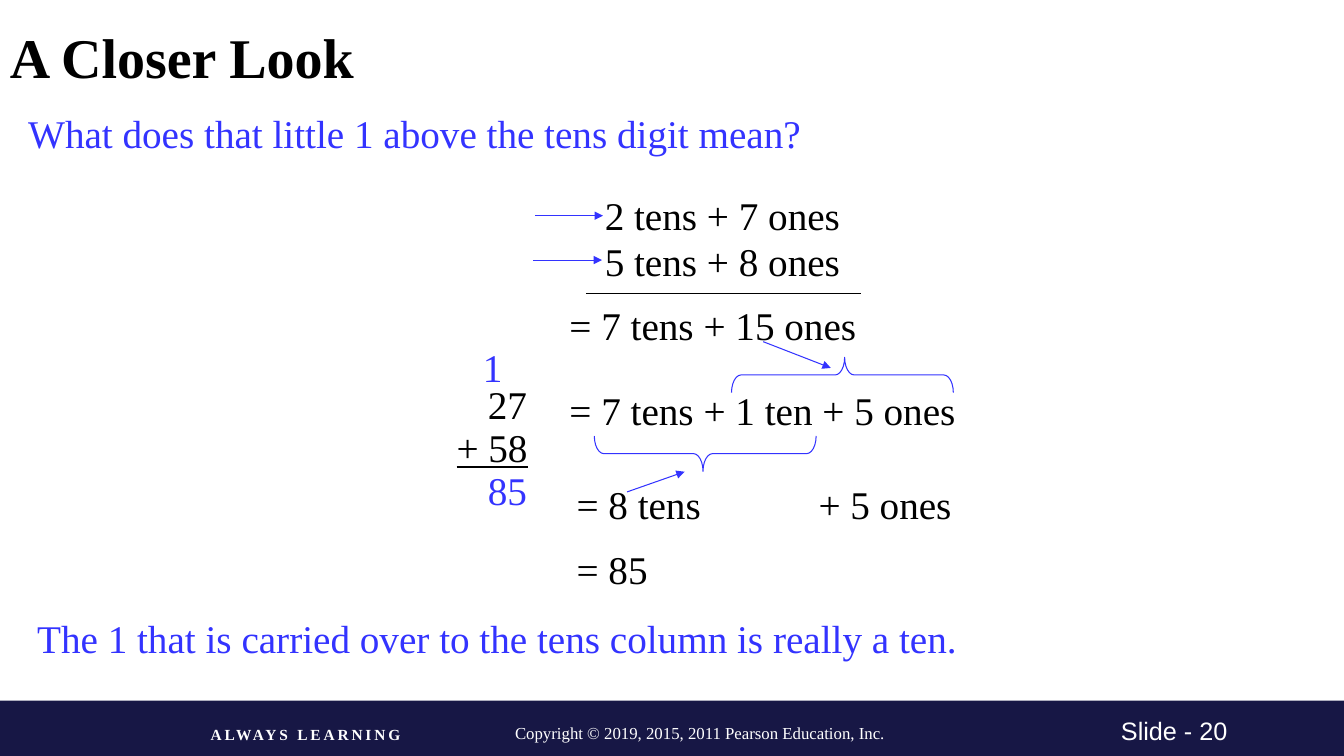
"""Builds the slide that explains the carried 1 in 27 + 58."""
import pptx
import pptx.dml.color
import pptx.enum.shapes
import pptx.enum.text
import pptx.oxml.ns
import pptx.util
from lxml import etree

Inches = pptx.util.Inches
Pt = pptx.util.Pt

THEME = {
    "ink": "000000", "accent": "3333FF", "band": "171745", "light": "FFFFFF",
    "serif": "Times New Roman", "sans": "Arial",
    "title": 40, "body": 28, "number": 18, "copyright": 12, "motto": 11,
    "line": 0.75,
}
BODY_HEIGHT = 0.57

TITLE = "A Closer Look"
STATEMENTS = [
    ("What does that little 1 above the tens digit mean?", 0.18, 1.04, 9.42),
    ("The 1 that is carried over to the tens column is really a ten.", 0.27, 6.05, 11.09),
]
SUM_COLUMN = [
    ("1", 4.69, 3.36, 0.4, "accent"),
    ("27", 4.74, 3.72, 0.66, "ink"),
    ("+ 58", 4.43, 4.15, 1.06, "ink"),
    ("85", 4.74, 4.58, 0.59, "accent"),
]
UNDERLINED = "+ 58"
EXPANSION = [
    ("2 tens + 7 ones", 5.9, 1.85, 2.56),
    ("5 tens + 8 ones", 5.9, 2.31, 2.56),
    ("= 7 tens + 15 ones", 5.55, 2.94, 3.07),
    ("= 7 tens + 1 ten + 5 ones", 5.55, 3.78, 4.07),
    ("= 8 tens\t+ 5 ones", 5.62, 4.72, 3.96),
    ("= 85", 5.62, 5.36, 0.91),
]
ONES_TAB = 2.4
SUM_RULE = (5.81, 2.91, 8.54, 2.91)
ARROWS = [
    (7.57, 3.39, 8.24, 3.65),
    (6.22, 4.88, 6.79, 4.68),
    (5.31, 2.14, 5.98, 2.14),
    (5.29, 2.58, 5.97, 2.58),
]
BRACES = [(8.18, 2.62, 90), (6.82, 3.4, 270)]
BRACE_SIZE = (0.35, 2.2)
BRACE_ADJUSTMENTS = (0.27, 0.49)
FOOTER = [
    ("Copyright © 2019, 2015, 2011 Pearson Education, Inc.", 5.01, 7.12, 5.19, 0.3, "copyright", "serif"),
    ("Slide - 20", 11.02, 7.05, 2, 0.4, "number", "sans"),
]
MOTTO = "ALWAYS LEARNING"


def color(name):
    return pptx.dml.color.RGBColor.from_string(THEME[name])


def add_text(page, text, left, top, width, height=BODY_HEIGHT, size="body",
             face="serif", ink="ink", wrap=True, tab=None):
    box = page.shapes.add_textbox(Inches(left), Inches(top), Inches(width), Inches(height))
    frame = box.text_frame
    frame.word_wrap = wrap
    frame.text = text
    para = frame.paragraphs[0]
    if tab:
        tabs = etree.SubElement(para._p.get_or_add_pPr(), pptx.oxml.ns.qn("a:tabLst"))
        etree.SubElement(tabs, pptx.oxml.ns.qn("a:tab"), pos=str(Inches(tab)), algn="l")
    for span in para.runs:
        span.font.size = Pt(THEME[size])
        span.font.name = THEME[face]
        span.font.color.rgb = color(ink)
    return box


def add_line(page, ends, ink, arrow=False):
    line = page.shapes.add_connector(
        pptx.enum.shapes.MSO_CONNECTOR.STRAIGHT, *[Inches(value) for value in ends])
    line.line.color.rgb = color(ink)
    line.line.width = Pt(THEME["line"])
    if arrow:
        etree.SubElement(line.line._get_or_add_ln(), pptx.oxml.ns.qn("a:tailEnd"), type="triangle")
    etree.SubElement(line._element.spPr, pptx.oxml.ns.qn("a:effectLst"))


def add_footer(page):
    band = page.shapes.add_shape(
        pptx.enum.shapes.MSO_SHAPE.RECTANGLE, 0, Inches(6.95), Inches(13.33), Inches(0.55))
    band.shadow.inherit = False
    band.fill.solid()
    band.fill.fore_color.rgb = color("band")
    band.line.fill.background()
    for text, left, top, width, height, size, face in FOOTER:
        add_text(page, text, left, top, width, height, size, face, "light")
    motto = add_text(page, MOTTO, 1.99, 7.14, 3.09, 0.29, "motto", ink="light")
    span = motto.text_frame.paragraphs[0].runs[0]
    span.font.bold = True
    span._r.get_or_add_rPr().set("spc", "200")


def add_title(page):
    box = add_text(page, TITLE, 0, 0.09, 13.33, 1.05, "title")
    box.text_frame.vertical_anchor = pptx.enum.text.MSO_ANCHOR.MIDDLE
    para = box.text_frame.paragraphs[0]
    para.line_spacing = 0.8
    para.runs[0].font.bold = True


def add_brace(page, left, top, rotation):
    width, height = BRACE_SIZE
    brace = page.shapes.add_shape(
        pptx.enum.shapes.MSO_SHAPE.LEFT_BRACE,
        Inches(left), Inches(top), Inches(width), Inches(height))
    brace.rotation = rotation
    for index, value in enumerate(BRACE_ADJUSTMENTS):
        brace.adjustments[index] = value
    brace.shadow.inherit = False
    brace.fill.background()
    brace.line.color.rgb = color("accent")
    brace.line.width = Pt(THEME["line"])


def main():
    deck = pptx.Presentation()
    deck.slide_width, deck.slide_height = Inches(13.33), Inches(7.5)
    page = deck.slides.add_slide(deck.slide_layouts[6])
    add_footer(page)
    add_title(page)
    for text, left, top, width in STATEMENTS:
        add_text(page, text, left, top, width, ink="accent")
    for text, left, top, width, ink in SUM_COLUMN:
        box = add_text(page, text, left, top, width, ink=ink, wrap=False)
        if text == UNDERLINED:
            box.text_frame.paragraphs[0].runs[0].font.underline = True
    for text, left, top, width in EXPANSION:
        tab = ONES_TAB if "\t" in text else None
        add_text(page, text, left, top, width, wrap=bool(tab), tab=tab)
    add_line(page, SUM_RULE, "ink")
    for brace in BRACES:
        add_brace(page, *brace)
    for ends in ARROWS:
        add_line(page, ends, "accent", arrow=True)
    deck.save("out.pptx")


if __name__ == "__main__":
    main()
